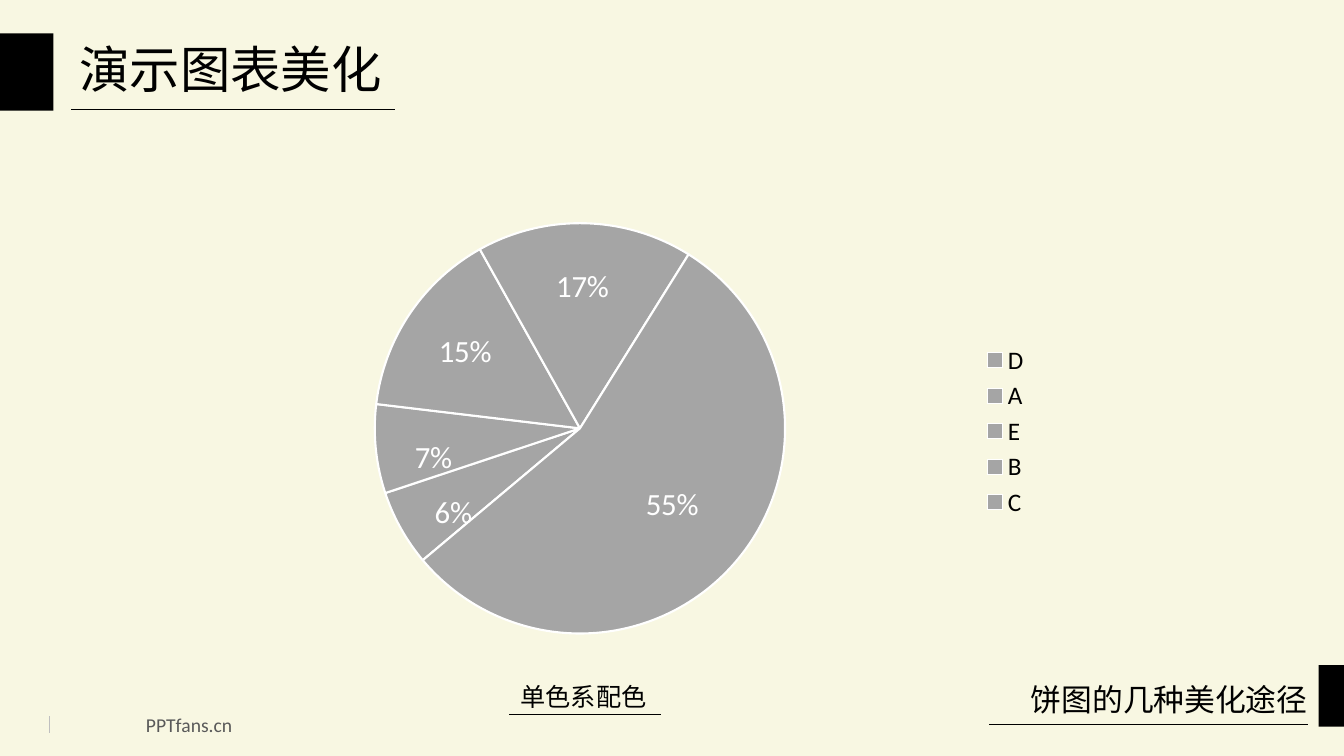
from lxml import etree
from pptx import Presentation
from pptx.chart.data import CategoryChartData
from pptx.dml.color import RGBColor
from pptx.enum.chart import XL_CHART_TYPE, XL_LABEL_POSITION, XL_LEGEND_POSITION
from pptx.enum.shapes import MSO_CONNECTOR, MSO_SHAPE
from pptx.enum.text import MSO_AUTO_SIZE, PP_ALIGN
from pptx.oxml.ns import qn
from pptx.util import Cm, Pt

PIE = XL_CHART_TYPE.PIE
CENTER_LABEL = XL_LABEL_POSITION.CENTER
LEGEND_RIGHT = XL_LEGEND_POSITION.RIGHT
STRAIGHT = MSO_CONNECTOR.STRAIGHT
RECT = MSO_SHAPE.RECTANGLE
GROW = MSO_AUTO_SIZE.SHAPE_TO_FIT_TEXT
LEFT, CENTER, RIGHT = PP_ALIGN.LEFT, PP_ALIGN.CENTER, PP_ALIGN.RIGHT


def rgb(value):
    """Return the colour for a hex string."""
    return RGBColor.from_string(value)


def write(tf, text, size=18, font="Noto Sans CJK SC", color="000000", align=LEFT):
    """Write one formatted paragraph into a text frame."""
    p = tf.paragraphs[0]
    p.alignment = align
    r = p.add_run()
    r.text = text
    style_font(r.font, size, font, color)
    etree.SubElement(r.font._element, qn("a:ea"), typeface=font)


def style_font(f, size, name, color):
    """Set size, typeface and colour of a font."""
    f.size = Pt(size)
    f.name = name
    f.color.rgb = rgb(color)


def manual_layout(**values):
    """Build a chart layout element from its settings."""
    layout = etree.Element(qn("c:layout"))
    manual = etree.SubElement(layout, qn("c:manualLayout"))
    for tag, value in values.items():
        etree.SubElement(manual, qn(f"c:{tag}"), val=str(value))
    return layout


class Deck:
    """Hold the style and the current slide."""

    ink = "000000"
    paper = "F8F7E2"
    slice_fill = "A5A5A5"
    white = "FFFFFF"
    latin = "Calibri"

    def __init__(self):
        """Open a wide deck with one blank slide."""
        self.prs = Presentation()
        self.prs.slide_width, self.prs.slide_height = Cm(33.87), Cm(19.05)
        self.s = self.prs.slides.add_slide(self.prs.slide_layouts[6])
        self.s.background.fill.solid()
        self.s.background.fill.fore_color.rgb = rgb(self.paper)

    def block(self, x, y, w, h):
        """Add a solid edge block."""
        sp = self.s.shapes.add_shape(RECT, Cm(x), Cm(y), Cm(w), Cm(h))
        sp.shadow.inherit = False
        sp.fill.solid()
        sp.fill.fore_color.rgb = rgb(self.ink)
        sp.line.fill.background()

    def rule(self, x1, y1, x2, y2, color=ink, width=0.5):
        """Add a thin straight line."""
        sp = self.s.shapes.add_connector(STRAIGHT, Cm(x1), Cm(y1), Cm(x2), Cm(y2))
        sp.line.color.rgb = rgb(color)
        sp.line.width = Pt(width)
        etree.SubElement(sp._element.spPr, qn("a:effectLst"))

    def text(self, text, x, y, w, h, wrap=True, **fmt):
        """Add a text box with one line of text."""
        tf = self.s.shapes.add_textbox(Cm(x), Cm(y), Cm(w), Cm(h)).text_frame
        tf.word_wrap = wrap
        tf.auto_size = GROW
        write(tf, text, **fmt)

    def pie(self, x, y, w, h, rows, start):
        """Add a single-colour pie from rows of name, value and label shift."""
        data = CategoryChartData()
        data.categories = [name for name, _, _ in rows]
        data.add_series("Series 1", [value for _, value, _ in rows])
        chart = self.s.shapes.add_chart(PIE, Cm(x), Cm(y), Cm(w), Cm(h), data).chart
        chart.has_title = False
        style_font(chart.font, 18, self.latin, self.ink)
        chart.has_legend = True
        chart.legend.position = LEGEND_RIGHT
        chart.legend.include_in_layout = False

        plot = chart.plots[0]
        plot.vary_by_categories = True
        points = plot.series[0].points
        for i, (_, _, (dx, dy)) in enumerate(rows):
            fmt = points[i].format
            fmt.fill.solid()
            fmt.fill.fore_color.rgb = rgb(self.slice_fill)
            fmt.line.color.rgb = rgb(self.white)
            fmt.line.width = Pt(1.5)
            style_font(points[i].data_label.font, 22, self.latin, self.white)
            points[i].data_label.position = CENTER_LABEL

        root = chart._chartSpace
        for label, (_, _, (dx, dy)) in zip(root.iter(qn("c:dLbl")), rows):
            label.find(qn("c:idx")).addnext(manual_layout(x=dx, y=dy))
            label.find(qn("c:showVal")).set("val", "0")
            label.find(qn("c:showPercent")).set("val", "1")

        area = root.find(".//" + qn("c:plotArea"))
        for old in area.findall(qn("c:layout")):
            area.remove(old)
        area.insert(0, manual_layout(layoutTarget="inner", xMode="edge", yMode="edge",
                                     x=0.1, y=0.075, w=0.558, h=0.838))
        pie = area.find(qn("c:pieChart"))
        for old in pie.findall(qn("c:firstSliceAng")):
            pie.remove(old)
        etree.SubElement(pie, qn("c:firstSliceAng"), val=str(start))


def main():
    """Build the slide and save it."""
    deck = Deck()
    deck.rule(1.8, 2.75, 9.95, 2.75)
    deck.text("演示图表美化", 1.75, 0.84, 13.6, 1.8, size=36)
    deck.block(0, 0.84, 1.35, 1.95)
    deck.block(33.23, 16.76, 0.64, 1.55)
    deck.rule(24.93, 18.25, 32.97, 18.25)
    deck.rule(1.25, 18.47, 1.25, 18.03, color="BFBFBF", width=0.75)
    deck.text("PPTfans.cn", 3.43, 17.83, 2.72, 0.86, wrap=False,
              size=14, font=deck.latin, color="595959")
    deck.text("饼图的几种美化途径", 24.64, 17.04, 8.56, 1.19, size=22, align=RIGHT)
    shares = [
        ("D", 6, (-0.05, 0.07)),
        ("A", 7, (-0.06, 0.04)),
        ("E", 15, (-0.04, -0.04)),
        ("B", 17, (0, -0.08)),
        ("C", 55, (0.02, 0.02)),
    ]
    deck.pie(7.54, 4.7, 18.67, 12.34, shares, start=230)
    deck.text("单色系配色", 12.24, 17.04, 4.93, 1.02, align=CENTER)
    deck.rule(12.83, 18.01, 16.66, 18.01)
    deck.prs.save("out.pptx")


if __name__ == "__main__":
    main()
